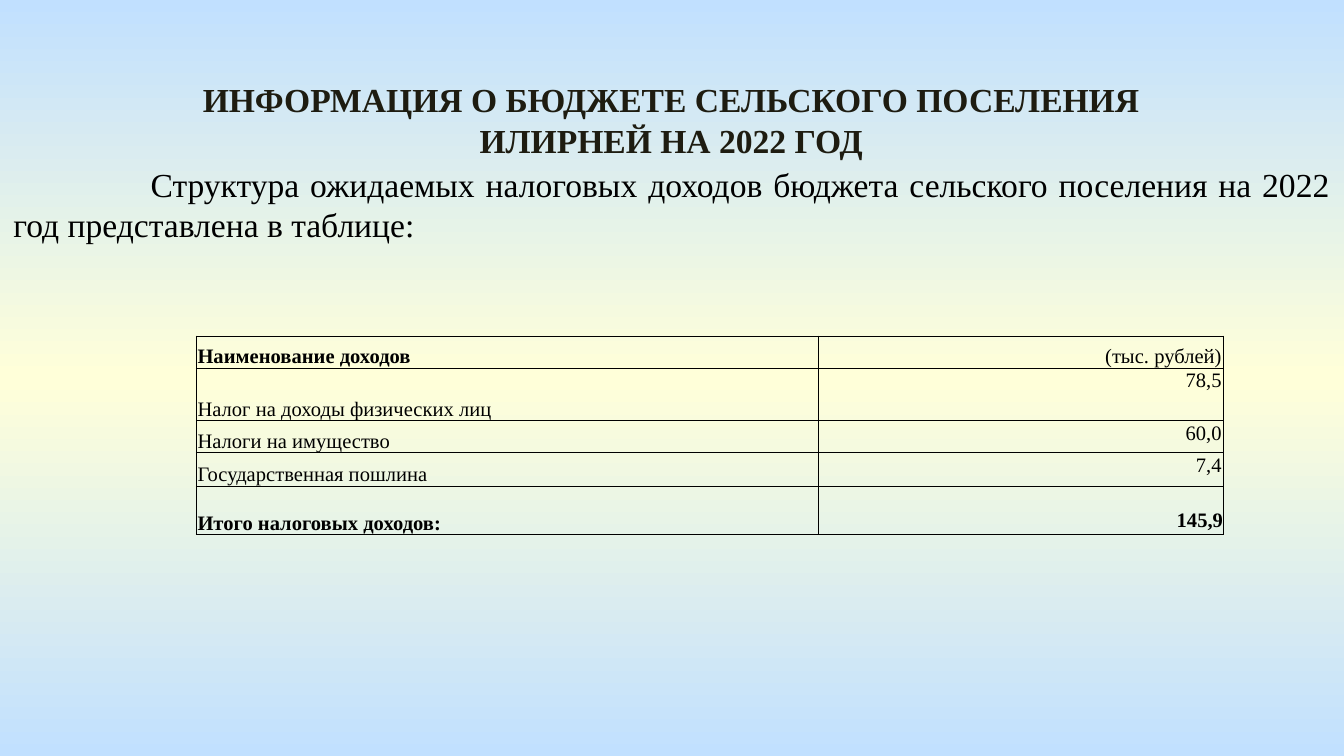
from copy import deepcopy
from dataclasses import dataclass

from lxml import etree
from pptx import Presentation
from pptx.dml.color import RGBColor
from pptx.enum.text import MSO_ANCHOR, MSO_AUTO_SIZE, PP_ALIGN
from pptx.oxml.ns import qn
from pptx.util import Inches, Pt

TOP, BOTTOM = MSO_ANCHOR.TOP, MSO_ANCHOR.BOTTOM
CENTER, JUSTIFY, RIGHT = PP_ALIGN.CENTER, PP_ALIGN.JUSTIFY, PP_ALIGN.RIGHT
GROW = MSO_AUTO_SIZE.SHAPE_TO_FIT_TEXT


@dataclass(frozen=True)
class Theme:
    """Colours, font and type sizes of the slide."""
    edge: str = "C1E0FF"
    middle: str = "FFFFD9"
    heading: str = "1E1C11"
    text: str = "000000"
    font: str = "Times New Roman"
    large: int = 18
    small: int = 11
    border: float = 0.5


THEME = Theme()
WIDTH = 10
HEIGHT = WIDTH * 9 / 16
TITLE = "ИНФОРМАЦИЯ О БЮДЖЕТЕ СЕЛЬСКОГО ПОСЕЛЕНИЯ ИЛИРНЕЙ НА 2022 ГОД"
INTRO = ("Структура ожидаемых налоговых доходов бюджета сельского поселения "
         "на 2022 год представлена в таблице:")
INCOMES = [
    ("Наименование доходов", "(тыс. рублей)"),
    ("Налог на доходы физических лиц", "78,5"),
    ("Налоги на имущество", "60,0"),
    ("Государственная пошлина", "7,4"),
    ("Итого налоговых доходов:", "145,9"),
]
COL_WIDTHS = [4.63, 3.01]
ROW_HEIGHTS = [0.24, 0.39, 0.24, 0.25, 0.36]


def set_background(s):
    """Fill the background with a vertical three-stop gradient."""
    fill = s.background.fill
    fill.gradient()
    fill.gradient_angle = 270
    gs_list = next(s.element.iter(qn("a:gsLst")))
    gs_list.append(deepcopy(gs_list[-1]))
    stops = [(0, THEME.edge), (0.5, THEME.middle), (1, THEME.edge)]
    for stop, (position, color) in zip(fill.gradient_stops, stops):
        stop.position = position
        stop.color.rgb = RGBColor.from_string(color)


def write(tf, text, size, align, color=THEME.text, bold=False):
    """Write one formatted paragraph and return it."""
    tf.text = text
    p = tf.paragraphs[0]
    p.alignment = align
    font = p.runs[0].font
    font.name, font.size, font.bold = THEME.font, Pt(size), bold
    font.color.rgb = RGBColor.from_string(color)
    return p


def place_text(sp, box, text, align, **style):
    """Move a placeholder, write its text and return the paragraph."""
    sp.left, sp.top, sp.width, sp.height = map(Inches, box)
    tf = sp.text_frame
    tf.word_wrap, tf.auto_size, tf.vertical_anchor = True, GROW, TOP
    p = write(tf, text, THEME.large, align, **style)
    p.space_before = Pt(0)
    return p


def indent_first_line(p, indent):
    """Remove the bullet and indent the first line."""
    pPr = p._p.get_or_add_pPr()
    pPr.set("marL", "0")
    pPr.set("indent", str(Inches(indent)))
    etree.SubElement(pPr, qn("a:buNone"))


def draw_borders(cell):
    """Draw a thin line on all four sides of a cell."""
    tcPr = cell._tc.get_or_add_tcPr()
    for side in ("a:lnL", "a:lnR", "a:lnT", "a:lnB"):
        ln = etree.SubElement(tcPr, qn(side), w=str(Pt(THEME.border)))
        fill = etree.SubElement(ln, qn("a:solidFill"))
        etree.SubElement(fill, qn("a:srgbClr"), val=THEME.text)


def fill_cell(cell, text, align, anchor, bold, inset, top):
    """Format one table cell and write its text."""
    draw_borders(cell)
    cell.fill.background()
    cell.margin_left = cell.margin_right = Inches(inset)
    cell.margin_top, cell.margin_bottom = Inches(top), 0
    cell.vertical_anchor = anchor
    write(cell.text_frame, text, THEME.small, align, bold=bold)


def add_income_table(s):
    """Add the table of tax incomes."""
    box = map(Inches, (1.46, 2.5, sum(COL_WIDTHS), sum(ROW_HEIGHTS)))
    table = s.shapes.add_table(len(INCOMES), len(COL_WIDTHS), *box).table
    table.first_row = table.horz_banding = False
    for column, width in zip(table.columns, COL_WIDTHS):
        column.width = Inches(width)
    last = len(INCOMES) - 1
    for i, (name, amount) in enumerate(INCOMES):
        table.rows[i].height = Inches(ROW_HEIGHTS[i])
        total = i == last
        fill_cell(table.cell(i, 0), name, JUSTIFY, BOTTOM,
                  i in (0, last), 0.01, 0.01)
        fill_cell(table.cell(i, 1), amount, RIGHT, TOP if i else BOTTOM,
                  total, 0 if total else 0.01, 0.17 if total else 0.01)


def main():
    """Build the slide and save it."""
    prs = Presentation()
    prs.slide_width, prs.slide_height = Inches(WIDTH), Inches(HEIGHT)
    s = prs.slides.add_slide(prs.slide_layouts[1])
    set_background(s)
    place_text(s.shapes.title, (1.13, 0.54, 7.73, 0.71), TITLE, CENTER,
               color=THEME.heading, bold=True)
    intro = place_text(s.placeholders[1], (0, 1.17, WIDTH, 0.71), INTRO,
                       JUSTIFY)
    indent_first_line(intro, 1.02)
    add_income_table(s)
    prs.save("out.pptx")


if __name__ == "__main__":
    main()
